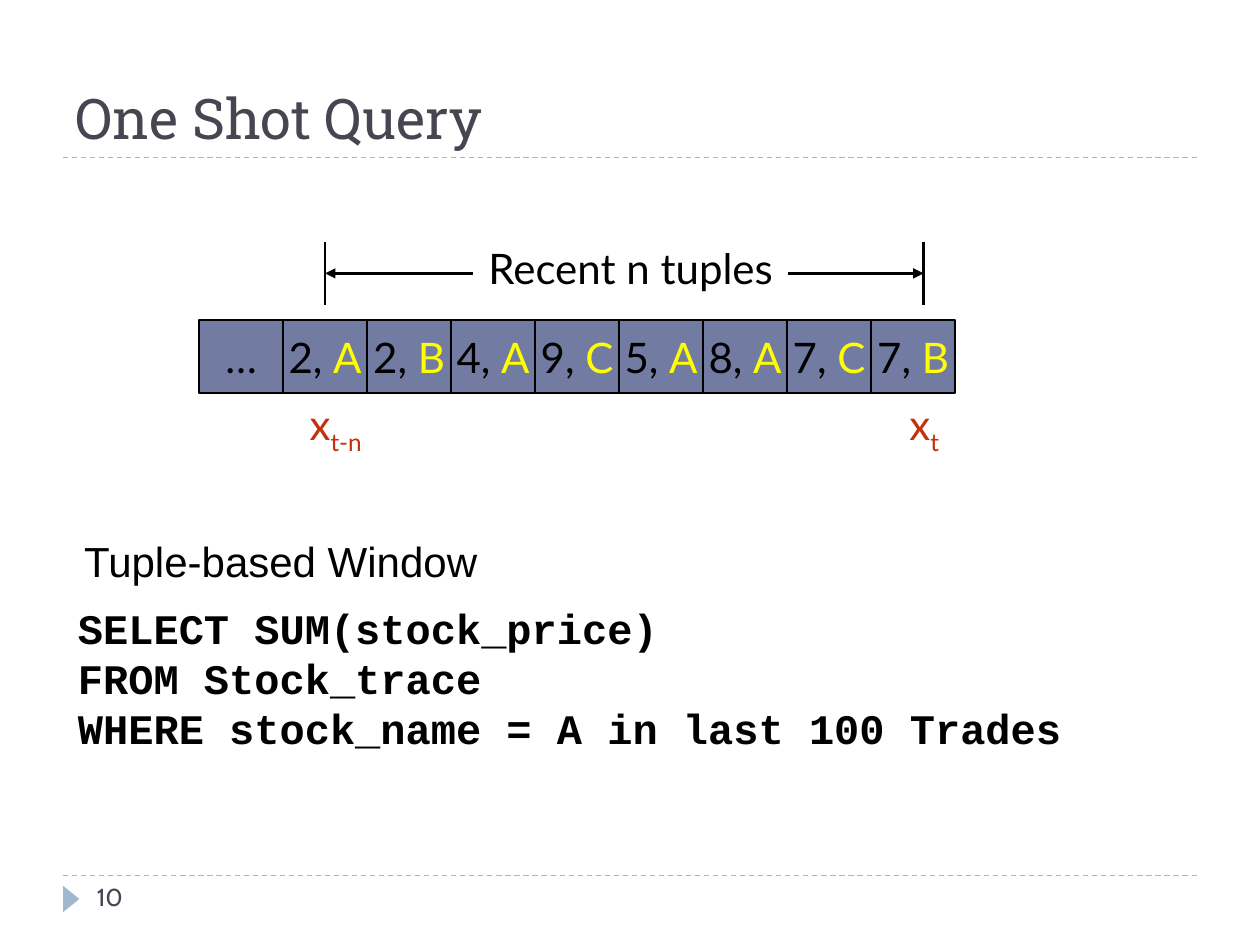
from typing import NamedTuple

from lxml.etree import SubElement
from pptx import Presentation
from pptx.dml.color import RGBColor
from pptx.enum.dml import MSO_LINE
from pptx.enum.shapes import MSO_CONNECTOR, MSO_SHAPE
from pptx.enum.text import MSO_ANCHOR, MSO_AUTO_SIZE, PP_ALIGN
from pptx.oxml.ns import qn
from pptx.util import Inches, Pt

BLACK = RGBColor(0x00, 0x00, 0x00)
SLATE = RGBColor(0x46, 0x46, 0x53)
PALE_BLUE = RGBColor(0x9F, 0xB8, 0xCD)
CELL_BLUE = RGBColor(0x72, 0x7C, 0xA3)
YELLOW = RGBColor(0xFF, 0xFF, 0x00)
RED = RGBColor(0xC2, 0x31, 0x0A)

CELL_LEFT, CELL_TOP, CELL_WIDTH, CELL_HEIGHT = 1.58, 2.54, 2 / 3, 0.58


class Piece(NamedTuple):
    """A stretch of text with its own colour or baseline (in percent)."""
    text: str
    color: RGBColor | None = None
    baseline: int = 0


class Rule(NamedTuple):
    start: tuple[float, float]
    end: tuple[float, float]
    color: RGBColor = BLACK
    width: float = 1.5
    dashed: bool = False
    arrow: bool = False


class Label(NamedTuple):
    box: tuple[float, float, float, float]
    lines: list[list[Piece]]
    font: str = "Lato"
    size: float = 24
    color: RGBColor = BLACK
    bold: bool = False
    align: PP_ALIGN = PP_ALIGN.LEFT
    spacing: float = 1.0
    wrap: bool = True


RULES = [
    Rule((0.5, 6.95), (9.5, 6.95), PALE_BLUE, 0.75, dashed=True),
    Rule((0.5, 1.25), (9.5, 1.25), PALE_BLUE, 0.75, dashed=True),
    Rule((2.58, 1.92), (2.58, 2.42)),
    Rule((7.33, 1.92), (7.33, 2.42)),
    Rule((6.25, 2.17), (7.33, 2.17), arrow=True),
    Rule((3.75, 2.17), (2.58, 2.17), arrow=True),
]

STREAM = ["…", "2, A", "2, B", "4, A", "9, C", "5, A", "8, A", "7, C", "7, B"]

QUERY = [
    "SELECT SUM(stock_price)",
    "FROM Stock_trace",
    "WHERE stock_name = A in last 100 Trades",
]

LABELS = [
    Label((0.67, 6.95, 2.17, 0.4), [[Piece("10")]], "Cabin", 14, SLATE),
    Label((3.76, 1.92, 2.49, 0.46), [[Piece("Recent n tuples")]],
          align=PP_ALIGN.CENTER, spacing=0.9, wrap=False),
    Label((6.92, 3.12, 0.83, 0.46), [[Piece("x"), Piece("t", baseline=-25)]],
          color=RED, align=PP_ALIGN.CENTER, spacing=0.9),
    Label((2.25, 3.12, 0.83, 0.46), [[Piece("x"), Piece("t-n", baseline=-25)]],
          color=RED, align=PP_ALIGN.CENTER, spacing=0.9),
    Label((0.52, 4.73, 8.19, 1.3), [[Piece(line)] for line in QUERY],
          "Courier New", bold=True),
    Label((0.57, 4.2, 3.34, 0.5), [[Piece("Tuple-based Window")]], "Arial", wrap=False),
]


def write_text(frame, lines: list[list[Piece]], *, font: str = "Lato", size: float = 24,
               color: RGBColor = BLACK, bold: bool = False,
               align: PP_ALIGN = PP_ALIGN.LEFT, anchor: MSO_ANCHOR = MSO_ANCHOR.TOP,
               spacing: float = 1.0, wrap: bool = True) -> None:
    frame.auto_size = MSO_AUTO_SIZE.NONE
    frame.word_wrap = wrap
    frame.vertical_anchor = anchor
    for index, pieces in enumerate(lines):
        paragraph = frame.add_paragraph() if index else frame.paragraphs[0]
        paragraph.alignment = align
        paragraph.line_spacing = spacing
        for piece in pieces:
            run = paragraph.add_run()
            run.text = piece.text
            run.font.name = font
            run.font.size = Pt(size)
            run.font.bold = bold
            run.font.color.rgb = piece.color or color
            if piece.baseline:
                run._r.get_or_add_rPr().set("baseline", str(piece.baseline * 1000))


def draw_rule(slide, rule: Rule) -> None:
    connector = slide.shapes.add_connector(
        MSO_CONNECTOR.STRAIGHT, *map(Inches, rule.start + rule.end))
    connector.line.color.rgb = rule.color
    connector.line.width = Pt(rule.width)
    if rule.dashed:
        connector.line.dash_style = MSO_LINE.DASH
    if rule.arrow:
        SubElement(connector.line._get_or_add_ln(), qn("a:tailEnd"), type="triangle")
    SubElement(connector._element.spPr, qn("a:effectLst"))


def draw_label(slide, label: Label) -> None:
    text_box = slide.shapes.add_textbox(*map(Inches, label.box))
    write_text(text_box.text_frame, label.lines, font=label.font, size=label.size,
               color=label.color, bold=label.bold, align=label.align,
               spacing=label.spacing, wrap=label.wrap)


def draw_stream_cell(slide, position: int, entry: str) -> None:
    cell = slide.shapes.add_shape(
        MSO_SHAPE.RECTANGLE, Inches(CELL_LEFT + position * CELL_WIDTH), Inches(CELL_TOP),
        Inches(CELL_WIDTH), Inches(CELL_HEIGHT))
    cell.shadow.inherit = False
    cell.fill.solid()
    cell.fill.fore_color.rgb = CELL_BLUE
    cell.line.color.rgb = BLACK
    cell.line.width = Pt(0.75)
    price, separator, stock = entry.partition(", ")
    pieces = [Piece(price + separator)]
    if stock:
        pieces.append(Piece(stock, YELLOW))
    write_text(cell.text_frame, [pieces], align=PP_ALIGN.CENTER,
               anchor=MSO_ANCHOR.MIDDLE, wrap=False)


def draw_page_marker(slide) -> None:
    marker = slide.shapes.add_shape(
        MSO_SHAPE.ISOSCELES_TRIANGLE, *map(Inches, (0.46, 7.07, 0.21, 0.13)))
    marker.rotation = 90
    marker.shadow.inherit = False
    marker.fill.solid()
    marker.fill.fore_color.rgb = PALE_BLUE
    marker.line.fill.background()


def main() -> None:
    presentation = Presentation()
    presentation.slide_width, presentation.slide_height = Inches(10), Inches(7.5)
    slide = presentation.slides.add_slide(presentation.slide_layouts[5])

    title = slide.shapes.title
    title.left, title.top, title.width, title.height = map(Inches, (0.5, 0.17, 9, 1.08))
    write_text(title.text_frame, [[Piece("One Shot Query")]], font="Roboto Slab",
               size=32, color=SLATE, anchor=MSO_ANCHOR.BOTTOM)

    draw_page_marker(slide)
    for position, entry in enumerate(STREAM):
        draw_stream_cell(slide, position, entry)
    for rule in RULES:
        draw_rule(slide, rule)
    for label in LABELS:
        draw_label(slide, label)

    presentation.save("out.pptx")


if __name__ == "__main__":
    main()
